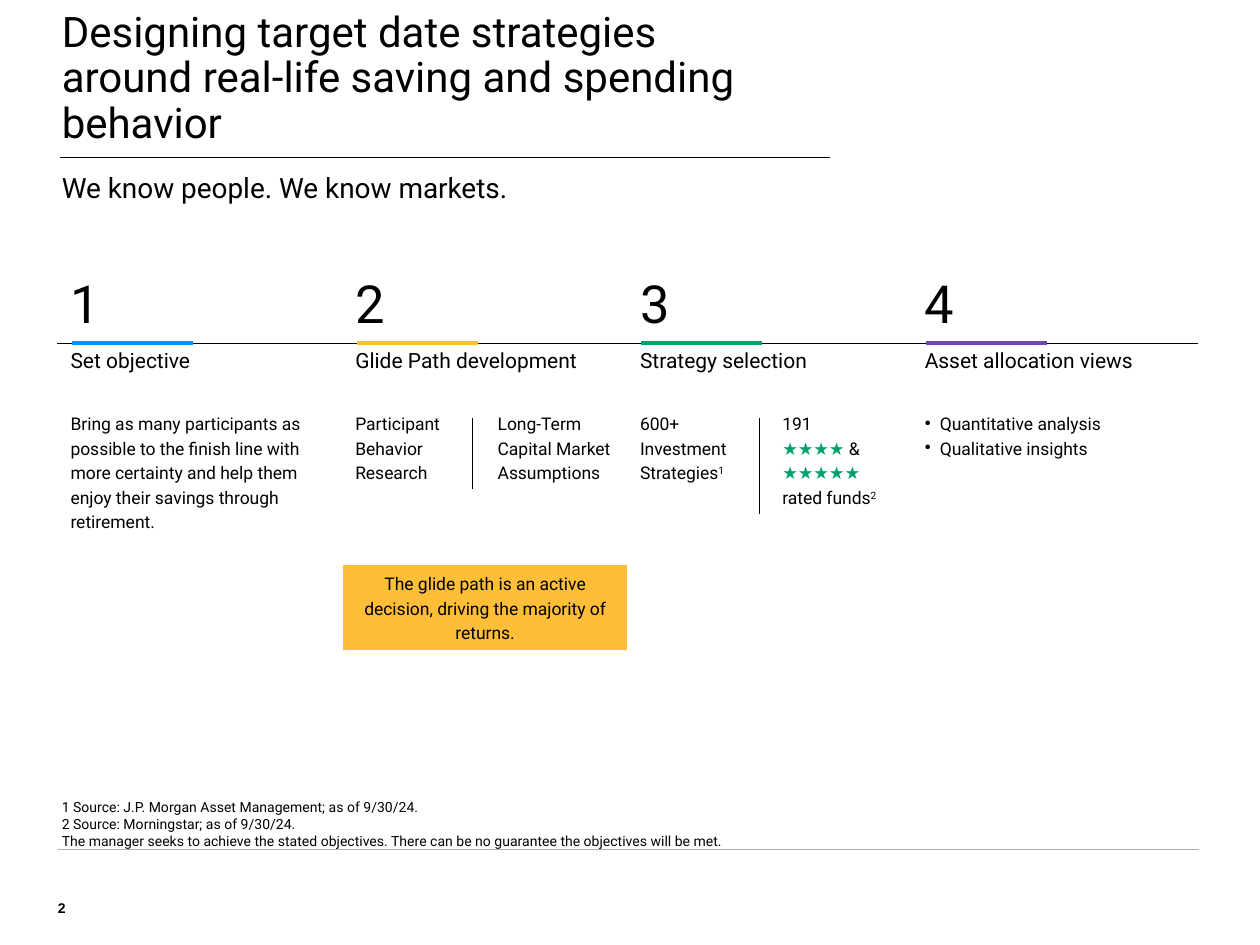
from dataclasses import dataclass

from lxml import etree
from pptx import Presentation
from pptx.dml.color import RGBColor
from pptx.enum import shapes, text
from pptx.oxml.ns import qn
from pptx.util import Inches, Pt


@dataclass(frozen=True)
class Theme:
    font: str = "Roboto"
    number_font: str = "Arial"
    black: str = "000000"
    white: str = "FFFFFF"
    gray: str = "ABADAF"
    blue: str = "0092F9"
    yellow: str = "FFBE37"
    green: str = "00A16D"
    purple: str = "6F44BB"
    title: int = 24
    subtitle: int = 16
    step: int = 30
    heading: int = 12
    body: int = 10
    small: int = 8


T = Theme()
LEFT, TOP = 0.46, 2.13
COL = 2.26
COLS = [COL] + [COL / 2] * 4 + [COL]
ROWS = [0.59, 0.49, 1.27, 0.67]
STEP_COLS = [0, 1, 3, 5]
STEPS = [
    ("Set objective", T.blue),
    ("Glide Path development", T.yellow),
    ("Strategy selection", T.green),
    ("Asset allocation views", T.purple),
]
DETAILS = [
    [["Bring as many participants as possible to the finish line with more "
      "certainty and help them enjoy their savings through retirement."]],
    [["Participant Behavior", "\n", "Research"]],
    [["Long-Term Capital Market Assumptions"]],
    [["600+"], ["Investment Strategies", ("1", T.black, True)]],
    [["191"],
     [("★★★★", T.green, False), " &", "\n", ("★★★★★", T.green, False), "\n",
      "rated funds", ("2", T.black, True)]],
    [["Quantitative analysis"], ["Qualitative insights"]],
]
NOTES = [
    ["1 Source: J.P. Morgan Asset Management; as of 9/30/24."],
    ["2 Source: Morningstar; as of 9/30/24."],
    ["The manager seeks to achieve the stated objectives. "
     "There can be no guarantee the objectives will be met."],
]


def add_run(p, part, size, font, bold):
    if part == "\n":
        p.add_line_break()
        etree.SubElement(p._p[-1], qn("a:rPr"), sz=str(size * 100))
        return
    words, color, raised = (part, T.black, False) if isinstance(part, str) else part
    r = p.add_run()
    r.text = words
    r.font.size = Pt(size)
    r.font.name = font
    r.font.bold = bold
    r.font.color.rgb = RGBColor.from_string(color)
    if raised:
        r._r.get_or_add_rPr().set("baseline", "30000")


def set_bullet(p, char=None, indent=0.0):
    pPr = p._p.get_or_add_pPr()
    pPr.set("marL", str(Inches(indent)))
    pPr.set("indent", str(-Inches(indent)))
    if char:
        etree.SubElement(pPr, qn("a:buChar"), char=char)
    else:
        etree.SubElement(pPr, qn("a:buNone"))


def write(tf, paragraphs, size, spacing=1.0, align=text.PP_ALIGN.LEFT,
          bullet=None, font=T.font, bold=False):
    for i, parts in enumerate(paragraphs):
        p = tf.paragraphs[0] if i == 0 else tf.add_paragraph()
        p.alignment = align
        p.line_spacing = spacing
        p.space_before = Pt(0)
        set_bullet(p, bullet, 0.12 if bullet else 0)
        for part in parts:
            add_run(p, part, size, font, bold)


def place_text(sp, box, paragraphs, size, anchor, wrap=True, **style):
    sp.left, sp.top, sp.width, sp.height = map(Inches, box)
    tf = sp.text_frame
    tf.margin_left = tf.margin_top = tf.margin_right = tf.margin_bottom = 0
    tf.word_wrap = wrap
    tf.auto_size = text.MSO_AUTO_SIZE.NONE
    tf.vertical_anchor = anchor
    write(tf, paragraphs, size, **style)


def add_line(s, x1, y1, x2, y2, color, width):
    ln = s.shapes.add_connector(shapes.MSO_CONNECTOR.STRAIGHT,
                                *map(Inches, (x1, y1, x2, y2)))
    ln.line.color.rgb = RGBColor.from_string(color)
    ln.line.width = Pt(width)
    etree.SubElement(ln._element.spPr, qn("a:effectLst"))


def set_borders(cell, row):
    ruled = {0: "B", 1: "T"}.get(row)
    tcPr = cell._tc.get_or_add_tcPr()
    for side in "LRTB":
        color, width = (T.black, 0.25) if side == ruled else (T.white, 1)
        ln = etree.SubElement(tcPr, qn(f"a:ln{side}"), w=str(Pt(width)))
        fill = etree.SubElement(ln, qn("a:solidFill"))
        etree.SubElement(fill, qn("a:srgbClr"), val=color)


def add_steps_table(s):
    frame = s.shapes.add_table(len(ROWS), len(COLS), Inches(LEFT), Inches(TOP),
                               Inches(sum(COLS)), Inches(sum(ROWS)))
    tbl = frame.table
    tbl.first_row = tbl.horz_banding = False
    for col, width in zip(tbl.columns, COLS):
        col.width = Inches(width)
    for i, (row, height) in enumerate(zip(tbl.rows, ROWS)):
        row.height = Inches(height)
        for cell in row.cells:
            set_borders(cell, i)
            cell.fill.background()
    for row, col in [(0, 1), (0, 3), (1, 1), (1, 3), (3, 1)]:
        tbl.cell(row, col).merge(tbl.cell(row, col + 1))

    for i, (col, (heading, _)) in enumerate(zip(STEP_COLS, STEPS), 1):
        write(tbl.cell(0, col).text_frame, [[str(i)]], T.step)
        write(tbl.cell(1, col).text_frame, [[heading]], T.heading)
    for col, paragraphs in enumerate(DETAILS):
        write(tbl.cell(2, col).text_frame, paragraphs, T.body, spacing=1.2,
              bullet="•" if col == 5 else None)
    callout = tbl.cell(3, 1)
    callout.fill.solid()
    callout.fill.fore_color.rgb = RGBColor.from_string(T.yellow)
    write(callout.text_frame,
          [["The glide path is an active decision, driving the majority of returns."]],
          T.body, spacing=1.2, align=text.PP_ALIGN.CENTER)


def add_step_lines(s):
    add_line(s, 3.75, 3.32, 3.75, 3.88, T.black, 0.5)
    add_line(s, 6.03, 3.32, 6.03, 4.08, T.black, 0.5)
    y = TOP + ROWS[0]
    for i, (_, color) in enumerate(STEPS):
        x = 0.57 + i * COL
        add_line(s, x, y, x + 0.96, y, color, 2.25)


def main():
    prs = Presentation()
    prs.slide_width, prs.slide_height = Inches(10), Inches(7.5)
    s = prs.slides.add_slide(prs.slide_layouts[3])
    title, subtitle, notes = s.placeholders
    top, bottom = text.MSO_ANCHOR.TOP, text.MSO_ANCHOR.BOTTOM

    add_line(s, 0.46, 6.74, 9.52, 6.74, T.gray, 0.5)
    add_line(s, 0.48, 1.25, 6.59, 1.25, T.black, 0.5)
    number = s.shapes.add_textbox(0, 0, 0, 0)
    place_text(number, (0.46, 7.06, 0.28, 0.21), [["2"]], T.small, bottom,
               wrap=False, font=T.number_font, bold=True)
    place_text(title, (0.49, 0.21, 5.76, 0.96),
               [["Designing target date strategies around real-life "
                 "saving and spending behavior"]],
               T.title, bottom, spacing=0.9)
    place_text(subtitle, (0.49, 1.35, 9.02, 0.49),
               [["We know people. We know markets."]], T.subtitle, top)
    place_text(notes, (0.49, 6.34, 9.02, 0.4), NOTES, T.small, bottom)
    add_steps_table(s)
    add_step_lines(s)
    prs.save("out.pptx")


if __name__ == "__main__":
    main()
